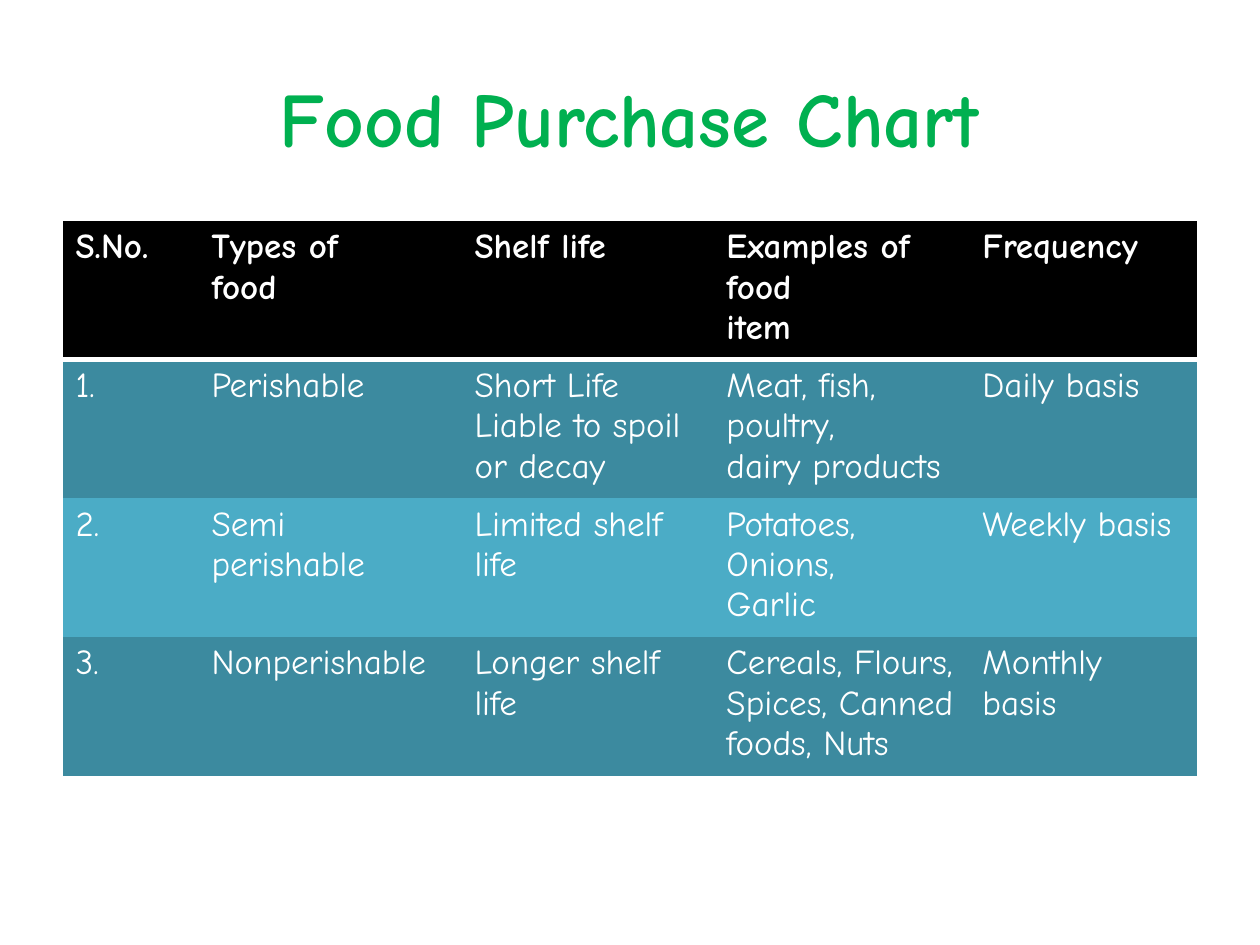
from dataclasses import dataclass

from lxml.etree import SubElement
from pptx import Presentation
from pptx.dml.color import RGBColor
from pptx.enum.text import MSO_ANCHOR, PP_ALIGN
from pptx.oxml.ns import qn
from pptx.util import Pt

PX = 914400 // 126  # EMU in one px
NO_STYLE = "{2D5ABB26-0587-4C30-8999-92F81FD0307C}"


@dataclass(frozen=True)
class Theme:
    font: str = "Comic Neue"
    title: str = "00B050"
    text: str = "FFFFFF"
    header: str = "000000"
    bands: tuple = ("3C8A9F", "4BACC6")
    title_pt: int = 44
    body_pt: int = 20
    rule_pt: int = 3


@dataclass(frozen=True)
class FoodRow:
    number: str
    food_type: str
    shelf_life: str
    examples: str
    frequency: str

    def texts(self) -> tuple:
        return (self.number, self.food_type, self.shelf_life,
                self.examples, self.frequency)


THEME = Theme()
COLUMNS = (136, 263, 252, 256, 227)
ROW_HEIGHT = 133
HEADER = FoodRow("S.No.", "Types of\nfood", "Shelf life",
                 "Examples of food\nitem", "Frequency")
FOODS = (
    FoodRow("1.", "Perishable", "Short Life\nLiable to spoil or decay",
            "Meat, fish, poultry,\ndairy products", "Daily basis"),
    FoodRow("2.", "Semi\nperishable", "Limited shelf life",
            "Potatoes, Onions,\nGarlic", "Weekly basis"),
    FoodRow("3.", "Nonperishable", "Longer shelf life",
            "Cereals, Flours,\nSpices, Canned\nfoods, Nuts", "Monthly basis"),
)


def write(tf, text: str, size: int, color: str, bold: bool, align=PP_ALIGN.LEFT) -> None:
    """Fill a text frame, one paragraph per line."""
    tf.text = text
    formats = {"name": THEME.font, "size": Pt(size), "bold": bold}
    for p in tf.paragraphs:
        p.alignment = align
        for r in p.runs:
            for name, value in formats.items():
                setattr(r.font, name, value)
            r.font.color.rgb = RGBColor.from_string(color)


def add_bottom_rule(cell, color: str, width: int) -> None:
    """Draw a bottom border; it must come before the cell's fill."""
    line = SubElement(cell._tc.get_or_add_tcPr(), qn("a:lnB"), w=str(Pt(width)))
    SubElement(SubElement(line, qn("a:solidFill")), qn("a:srgbClr"), val=color)


def fill_row(table, index: int, row: FoodRow, fill: str, header: bool) -> None:
    table.rows[index].height = ROW_HEIGHT * PX
    for cell, text in zip(table.rows[index].cells, row.texts()):
        write(cell.text_frame, text, THEME.body_pt, THEME.text, header)
        if header:
            add_bottom_rule(cell, THEME.text, THEME.rule_pt)
        cell.fill.solid()
        cell.fill.fore_color.rgb = RGBColor.from_string(fill)


def add_title(s, text: str) -> None:
    tf = s.shapes.add_textbox(63 * PX, 38 * PX, 1134 * PX, 157 * PX).text_frame
    tf.word_wrap = True
    tf.vertical_anchor = MSO_ANCHOR.MIDDLE
    write(tf, text, THEME.title_pt, THEME.title, True, PP_ALIGN.CENTER)


def add_food_table(s) -> None:
    rows = len(FOODS) + 1
    table = s.shapes.add_table(rows, len(COLUMNS), 63 * PX, 221 * PX,
                               sum(COLUMNS) * PX, rows * ROW_HEIGHT * PX).table
    table._tbl.tblPr.find(qn("a:tableStyleId")).text = NO_STYLE
    table.horz_banding = False
    for column, width in zip(table.columns, COLUMNS):
        column.width = width * PX
    fill_row(table, 0, HEADER, THEME.header, True)
    for i, food in enumerate(FOODS):
        fill_row(table, i + 1, food, THEME.bands[i % 2], False)


def main() -> None:
    prs = Presentation()
    prs.slide_width, prs.slide_height = 1260 * PX, 945 * PX
    s = prs.slides.add_slide(prs.slide_layouts[6])

    # Heading
    add_title(s, "Food Purchase Chart")
    # Foods by shelf life
    add_food_table(s)

    prs.save("out.pptx")


if __name__ == "__main__":
    main()
